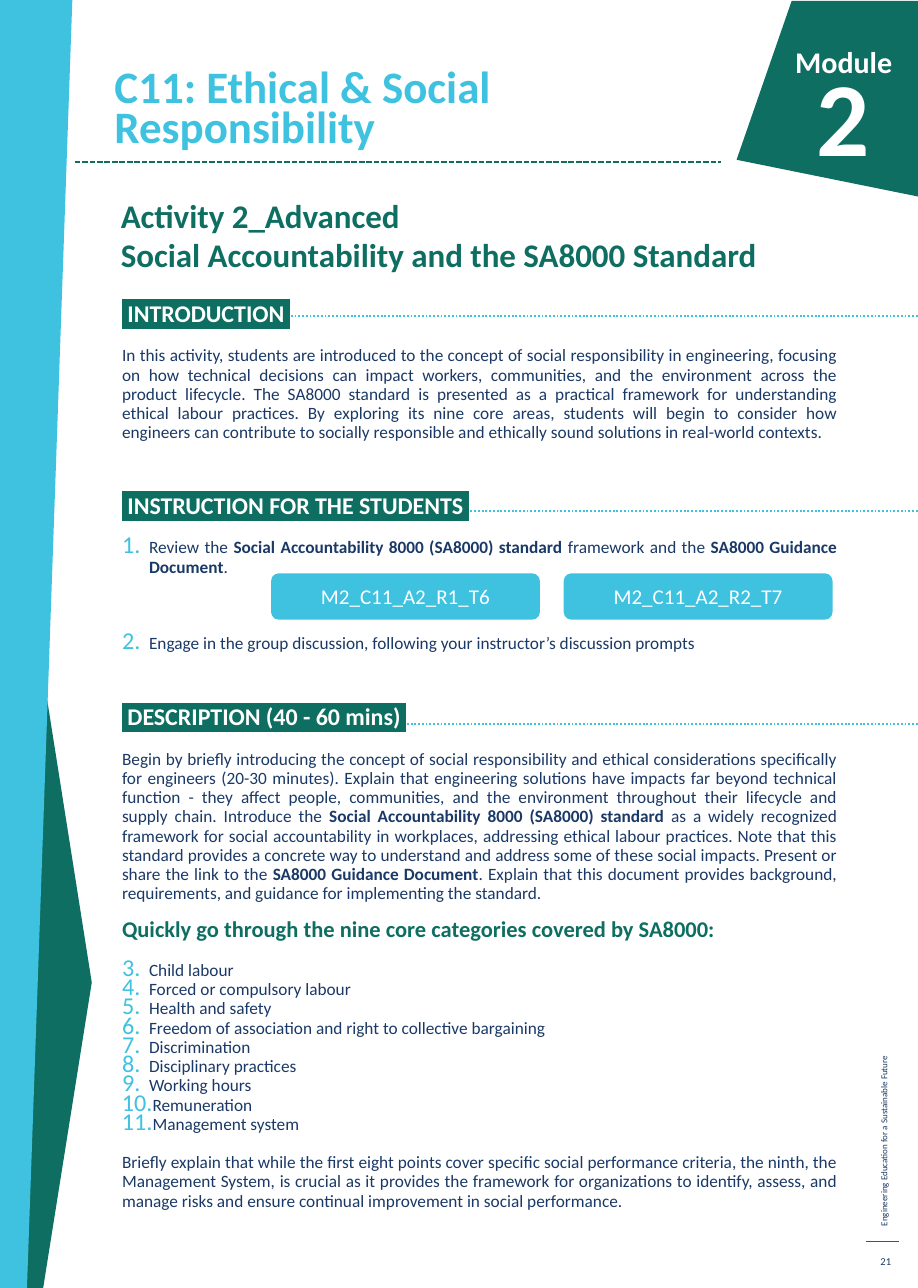
from typing import NamedTuple

from lxml import etree
from pptx import Presentation
from pptx.dml.color import RGBColor
from pptx.enum.dml import MSO_LINE
from pptx.enum.shapes import MSO_CONNECTOR, MSO_SHAPE
from pptx.enum.text import MSO_ANCHOR, MSO_AUTO_SIZE, PP_ALIGN
from pptx.oxml.ns import qn
from pptx.util import Inches, Pt

LEFT, RIGHT = PP_ALIGN.LEFT, PP_ALIGN.RIGHT
CENTER, JUSTIFY = PP_ALIGN.CENTER, PP_ALIGN.JUSTIFY
TOP, MIDDLE, BOTTOM = MSO_ANCHOR.TOP, MSO_ANCHOR.MIDDLE, MSO_ANCHOR.BOTTOM
DASH, DOT = MSO_LINE.SQUARE_DOT, MSO_LINE.ROUND_DOT
COLORS = {"green": "0E6E61", "cyan": "3FC2E0", "navy": "1A3966", "white": "FFFFFF"}
WIDE, HIGH = Inches(8.5), Inches(11.93)
LEAD = 12.8  # line pitch of the body text, in points


class Box(NamedTuple):
    """A frame in percent of the slide's width and height."""
    x: float
    y: float
    w: float
    h: float


class Style(NamedTuple):
    size: float
    color: str
    bold: bool = False
    align: PP_ALIGN = LEFT


class Label(NamedTuple):
    text: str
    box: Box
    style: Style
    anchor: MSO_ANCHOR = TOP
    turn: int = 0


class Rule(NamedTuple):
    x: float
    end: float
    y: float
    color: str
    width: float = 1.25
    dash: MSO_LINE | None = None


class Para(NamedTuple):
    """Body paragraph; gap counts lines of space above, ** marks bold."""
    kind: str
    gap: int
    text: str


HEAD, TEXT, ITEM, SUB = "head", "text", "item", "sub"
KINDS = {
    HEAD: Style(16, "white", True, JUSTIFY),
    TEXT: Style(11.5, "navy", False, JUSTIFY),
    ITEM: Style(11.5, "navy", False, JUSTIFY),
    SUB: Style(15, "green", True, JUSTIFY),
}
AREAS = ["Child labour", "Forced or compulsory labour", "Health and safety",
         "Freedom of association and right to collective bargaining",
         "Discrimination", "Disciplinary practices", "Working hours",
         "Remuneration", "Management system"]
PARAS = [
    Para(HEAD, 0, " INTRODUCTION "),
    Para(TEXT, 1, "In this activity, students are introduced to the concept of social responsibility in engineering, focusing on how technical decisions can impact workers, communities, and the environment across the product lifecycle. The SA8000 standard is presented as a practical framework for understanding ethical labour practices. By exploring its nine core areas, students will begin to consider how engineers can contribute to socially responsible and ethically sound solutions in real-world contexts."),
    Para(HEAD, 3, " INSTRUCTION FOR THE STUDENTS "),
    Para(ITEM, 1, "Review the **Social Accountability 8000 (SA8000) standard **framework and the **SA8000 Guidance Document**."),
    Para(ITEM, 3, "Engage in the group discussion, following your instructor’s discussion prompts"),
    Para(HEAD, 3, " DESCRIPTION (40 - 60 mins) "),
    Para(TEXT, 1, "Begin by briefly introducing the concept of social responsibility and ethical considerations specifically for engineers (20-30 minutes). Explain that engineering solutions have impacts far beyond technical function - they affect people, communities, and the environment throughout their lifecycle and supply chain. Introduce the **Social Accountability 8000 (SA8000) standard** as a widely recognized framework for social accountability in workplaces, addressing ethical labour practices. Note that this standard provides a concrete way to understand and address some of these social impacts. Present or share the link to the **SA8000 Guidance Document**. Explain that this document provides background, requirements, and guidance for implementing the standard."),
    Para(SUB, 1, "Quickly go through the nine core categories covered by SA8000:"),
    *[Para(ITEM, int(i == 0), area) for i, area in enumerate(AREAS)],
    Para(TEXT, 1, "Briefly explain that while the first eight points cover specific social performance criteria, the ninth, the Management System, is crucial as it provides the framework for organizations to identify, assess, and manage risks and ensure continual improvement in social performance."),
]
BANDS = [
    ("green", [(4.71, 100), (2.71, 100), (2.71, 43.34), (9.76, 75.19), (10, 76.28)]),
    ("cyan", [(0, 0), (7.88, 0), (2.94, 100), (0, 100)]),
    ("green", [(100, 0.08), (86.24, 0.08), (80.24, 12.41), (100, 15.26)]),
]
RULES = [
    Rule(94.35, 97.88, 96.4, "green", 0.75),
    Rule(8.12, 78.59, 12.57, "green", dash=DASH),
    Rule(29.65, 100, 24.56, "cyan", dash=DOT),
    Rule(29.65, 100, 39.65, "cyan", dash=DOT),
    Rule(30.47, 100, 56.24, "cyan", dash=DOT),
]
LABELS = [
    Label("Engineering Education for a Sustainable Future",
          Box(69.88, 76.36, 52.82, 1.68), Style(6, "navy"), turn=270),
    Label("21", Box(94.35, 96.73, 3.88, 2.43), Style(7, "navy", align=RIGHT), MIDDLE),
    Label("Activity 2_Advanced\vSocial Accountability and the SA8000 Standard",
          Box(12, 14.75, 72.47, 8.8), Style(22, "green", True)),
    Label("Module", Box(77.18, 2.93, 21.18, 11.9), Style(20, "white", True, RIGHT)),
    Label("2", Box(74.71, 3.6, 21.18, 11.9), Style(70, "white", True, RIGHT)),
]
TITLE = Label("C11: Ethical & Social Responsibility",
              Box(11.29, 3.02, 47.65, 9.22), Style(30, "cyan", True), BOTTOM)
BODY = Box(12, 23.47, 80.35, 35.21)
LINKS = ["M2_C11_A2_R1_T6", "M2_C11_A2_R2_T7"]


def col(x: float) -> int:
    return round(WIDE * x / 100)


def row(y: float) -> int:
    return round(HIGH * y / 100)


def paint(name: str) -> RGBColor:
    return RGBColor.from_string(COLORS[name])


def place(shape, box: Box) -> None:
    shape.left, shape.top = col(box.x), row(box.y)
    shape.width, shape.height = col(box.w), row(box.h)


def dress(para, style: Style) -> None:
    para.alignment = style.align
    font = para.font
    font.name, font.size, font.bold = "Calibri", Pt(style.size), style.bold
    font.color.rgb = paint(style.color)


def flat(shape, color: str) -> None:
    shape.shadow.inherit = False
    shape.fill.solid()
    shape.fill.fore_color.rgb = paint(color)
    shape.line.fill.background()


def write(shape, label: Label) -> None:
    frame = shape.text_frame
    frame.word_wrap, frame.auto_size = True, MSO_AUTO_SIZE.NONE
    frame.vertical_anchor = label.anchor
    frame.text = label.text
    dress(frame.paragraphs[0], label.style)
    shape.rotation = label.turn


def draw_band(shapes, color: str, spots: list) -> None:
    points = [(col(x), row(y)) for x, y in spots]
    pen = shapes.build_freeform(*points[0])
    pen.add_line_segments(points[1:], close=True)
    flat(pen.convert_to_shape(), color)


def draw_rule(shapes, rule: Rule) -> None:
    line = shapes.add_connector(MSO_CONNECTOR.STRAIGHT, col(rule.x), row(rule.y),
                                col(rule.end), row(rule.y))
    line.line.color.rgb = paint(rule.color)
    line.line.width = Pt(rule.width)
    if rule.dash is not None:
        line.line.dash_style = rule.dash
    etree.SubElement(line.element.spPr, qn("a:effectLst"))


def tint(parent, tag: str, color: str) -> None:
    node = etree.SubElement(parent, qn(tag))
    etree.SubElement(node, qn("a:srgbClr"), val=COLORS[color])


def fill_para(para, item: Para) -> None:
    para.line_spacing = Pt(LEAD)
    para.space_before, para.space_after = Pt(item.gap * LEAD), Pt(0)
    props = para._p.get_or_add_pPr()
    listed = item.kind == ITEM
    props.set("marL", str(Inches(0.26 if listed else 0.01)))
    props.set("indent", str(Inches(-0.25 if listed else 0)))
    if listed:
        tint(props, "a:buClr", "cyan")
        etree.SubElement(props, qn("a:buSzPct"), val="140000")
        etree.SubElement(props, qn("a:buFont"), typeface="+mj-lt")
        etree.SubElement(props, qn("a:buAutoNum"), type="arabicPeriod")
    else:
        etree.SubElement(props, qn("a:buNone"))
    dress(para, KINDS[item.kind])
    for i, part in enumerate(item.text.split("**")):
        run = para.add_run()
        run.text = part
        if i % 2:
            run.font.bold = True
        if item.kind == HEAD:
            tint(run._r.get_or_add_rPr(), "a:highlight", "green")


def main() -> None:
    deck = Presentation()
    deck.slide_width, deck.slide_height = WIDE, HIGH
    slide = deck.slides.add_slide(deck.slide_layouts[1])
    shapes = slide.shapes
    for color, spots in BANDS:
        draw_band(shapes, color, spots)
    for rule in RULES:
        draw_rule(shapes, rule)
    for label in LABELS:
        box = shapes.add_textbox(0, 0, 0, 0)
        place(box, label.box)
        write(box, label)
    for i, link in enumerate(LINKS):
        key = shapes.add_shape(MSO_SHAPE.ROUNDED_RECTANGLE, 0, 0, 0, 0)
        spot = Box(29.53 + 31.88 * i, 44.51, 29.29, 3.6)
        place(key, spot)
        flat(key, "cyan")
        write(key, Label(link, spot, Style(14, "white", align=CENTER), MIDDLE))

    title, body = shapes.title, slide.placeholders[1]
    place(title, TITLE.box)
    write(title, TITLE)
    title.text_frame.paragraphs[0].line_spacing = Pt(26.8)
    place(body, BODY)
    frame = body.text_frame
    frame.word_wrap, frame.auto_size = True, MSO_AUTO_SIZE.NONE
    for i, item in enumerate(PARAS):
        fill_para(frame.add_paragraph() if i else frame.paragraphs[0], item)
    body.element.getparent().append(body.element)  # headings cover the rules
    deck.save("out.pptx")


if __name__ == "__main__":
    main()
